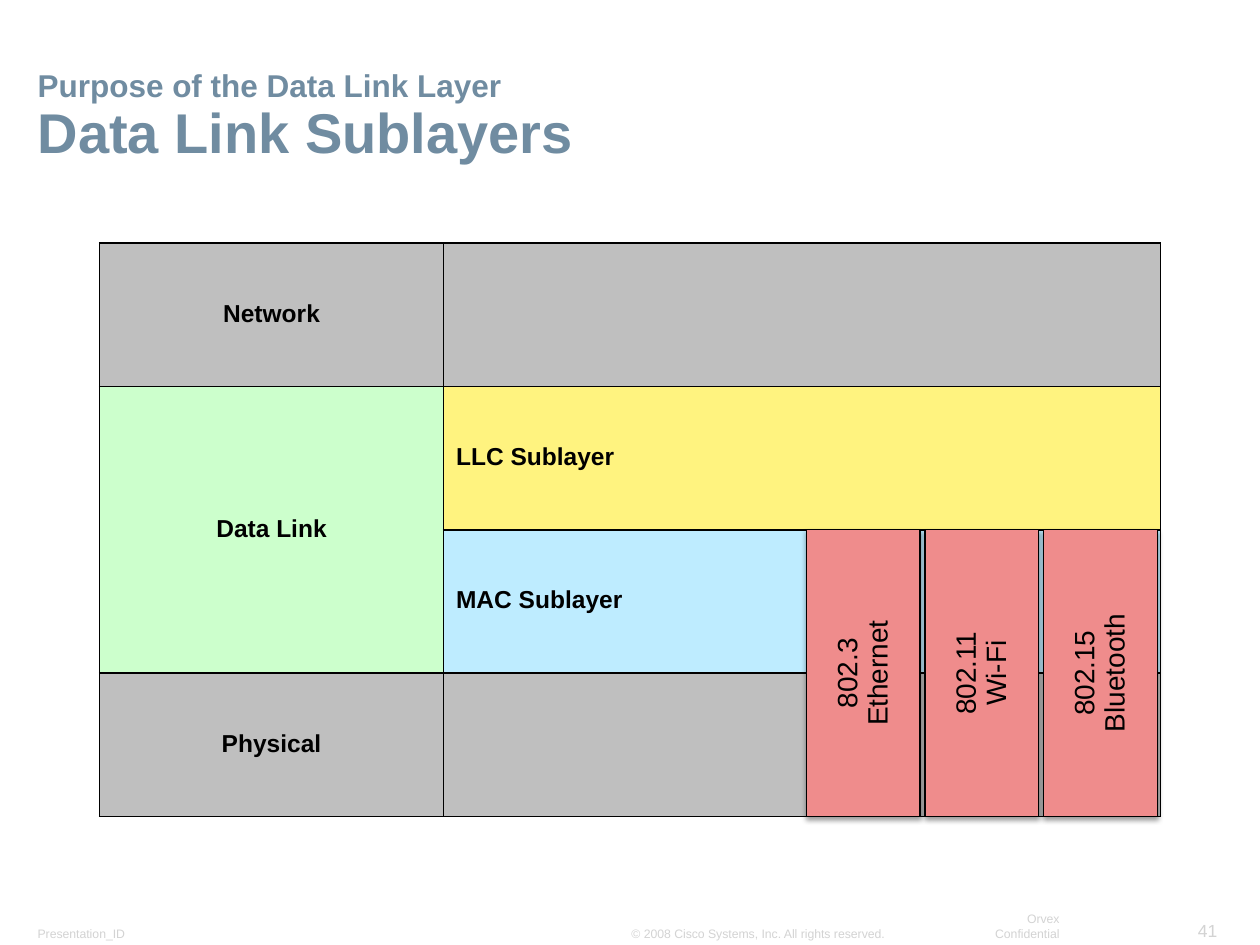
import pptx
import pptx.dml.color
import pptx.enum.shapes
import pptx.enum.text
import pptx.oxml
import pptx.oxml.ns
import pptx.util

Cm, Pt = pptx.util.Cm, pptx.util.Pt
ALIGN = pptx.enum.text.PP_ALIGN
ANCHOR = pptx.enum.text.MSO_ANCHOR
COLORS = {
    "title": "708CA1", "footer": "D3D3D3", "black": "000000",
    "grey": "BFBFBF", "green": "CCFFCC", "yellow": "FFF37F",
    "blue": "BEECFF", "red": "EF8C8C",
}
XMLNS = pptx.oxml.ns.nsdecls("a")


def rgb(name):
    return pptx.dml.color.RGBColor.from_string(COLORS[name])


def add_run(paragraph, text, size, color, bold=False):
    run = paragraph.add_run()
    run.text = text
    run.font.name = "Arial"
    run.font.size = Pt(size)
    run.font.bold = bold
    run.font.color.rgb = rgb(color)


prs = pptx.Presentation()
prs.slide_width, prs.slide_height = Cm(25.4), Cm(19.05)
slide = prs.slides.add_slide(prs.slide_layouts[6])

# Footer and title boxes: left, top, width, height, wrap, alignment, lines
text_boxes = [
    (0.53, 18.54, 2.67, 0.53, True, ALIGN.LEFT,
     [("Presentation_ID", 7, "footer", False)]),
    (23.88, 18.42, 0.89, 0.66, False, ALIGN.RIGHT,
     [("41", 10, "footer", False)]),
    (12.5, 18.54, 5.61, 0.53, False, ALIGN.LEFT,
     [("© 2008 Cisco Systems, Inc. All rights reserved.", 7, "footer", False)]),
    (19.15, 18.54, 2.44, 0.53, False, ALIGN.RIGHT,
     [("Orvex Confidential", 7, "footer", False)]),
    (0.53, 1.09, 24.36, 2.34, True, ALIGN.LEFT,
     [("Purpose of the Data Link Layer", 18, "title", True),
      ("Data Link Sublayers", 32, "title", True)]),
]
for left, top, width, height, wrap, align, lines in text_boxes:
    frame = slide.shapes.add_textbox(Cm(left), Cm(top), Cm(width), Cm(height)).text_frame
    frame.word_wrap = wrap
    frame.vertical_anchor = ANCHOR.BOTTOM
    frame.margin_left = frame.margin_right = Cm(0.23)
    frame.margin_top = frame.margin_bottom = Cm(0.1)
    paragraph = frame.paragraphs[0]
    paragraph.alignment = align
    if len(lines) > 1:
        paragraph.line_spacing = 0.9
    for index, line in enumerate(lines):
        if index:
            paragraph.add_line_break()
        add_run(paragraph, *line)

# Layer table
TABLE_LEFT, TABLE_TOP, ROW_HEIGHT = 2.01, 4.9, 2.89
COLUMN_WIDTHS = [6.93, 14.45]
layer_rows = [
    [("Network", "grey"), ("", "grey")],
    [("Data Link", "green"), ("LLC Sublayer", "yellow")],
    [("", "green"), ("MAC Sublayer", "blue")],
    [("Physical", "grey"), ("", "grey")],
]
layers = slide.shapes.add_table(
    len(layer_rows), 2, Cm(TABLE_LEFT), Cm(TABLE_TOP),
    Cm(sum(COLUMN_WIDTHS)), Cm(ROW_HEIGHT * len(layer_rows))).table
layers.first_row = layers.horz_banding = False
for column, width in zip(layers.columns, COLUMN_WIDTHS):
    column.width = Cm(width)
for row_index, row in enumerate(layer_rows):
    layers.rows[row_index].height = Cm(ROW_HEIGHT)
    for column_index, (label, color) in enumerate(row):
        cell = layers.cell(row_index, column_index)
        cell.vertical_anchor = ANCHOR.MIDDLE
        cell.fill.solid()
        cell.fill.fore_color.rgb = rgb(color)
        if label:
            paragraph = cell.text_frame.paragraphs[0]
            paragraph.alignment = ALIGN.LEFT if column_index else ALIGN.CENTER
            paragraph.line_spacing = 0.9
            add_run(paragraph, label, 14, "black", True)
        # Borders come before the fill in the cell properties
        properties = cell._tc.get_or_add_tcPr()
        for position, side in enumerate(("lnL", "lnR", "lnT", "lnB")):
            properties.insert(position, pptx.oxml.parse_xml(
                f'<a:{side} {XMLNS} w="{Pt(1)}"><a:solidFill>'
                f'<a:srgbClr val="{COLORS["black"]}"/></a:solidFill></a:{side}>'))
layers.cell(1, 0).merge(layers.cell(2, 0))

# Standards spanning the MAC sublayer and the physical layer
BAR_LEFT, BAR_WIDTH, BAR_PITCH = 16.26, 2.29, 2.39
standards = [("802.3", "Ethernet"), ("802.11", "Wi-Fi"), ("802.15", "Bluetooth")]
for index, standard in enumerate(standards):
    bar = slide.shapes.add_shape(
        pptx.enum.shapes.MSO_SHAPE.RECTANGLE,
        Cm(BAR_LEFT + index * BAR_PITCH), Cm(TABLE_TOP + 2 * ROW_HEIGHT),
        Cm(BAR_WIDTH), Cm(2 * ROW_HEIGHT))
    bar.fill.solid()
    bar.fill.fore_color.rgb = rgb("red")
    bar.line.color.rgb = rgb("black")
    bar.line.width = Pt(0.75)
    bar.shadow.inherit = False
    effects = bar.element.spPr.find(pptx.oxml.ns.qn("a:effectLst"))
    effects.append(pptx.oxml.parse_xml(
        f'<a:outerShdw {XMLNS} blurRad="{Pt(3.1)}" dist="{Pt(1.6)}" dir="5400000" '
        f'rotWithShape="0"><a:srgbClr val="{COLORS["black"]}">'
        '<a:alpha val="38000"/></a:srgbClr></a:outerShdw>'))
    frame = bar.text_frame
    frame.word_wrap = True
    frame.vertical_anchor = ANCHOR.MIDDLE
    bar.element.txBody.bodyPr.set("vert", "vert270")
    for line_index, line in enumerate(standard):
        paragraph = frame.add_paragraph() if line_index else frame.paragraphs[0]
        paragraph.alignment = ALIGN.CENTER
        paragraph.line_spacing = 0.9
        add_run(paragraph, line, 16, "black")

prs.save("out.pptx")
